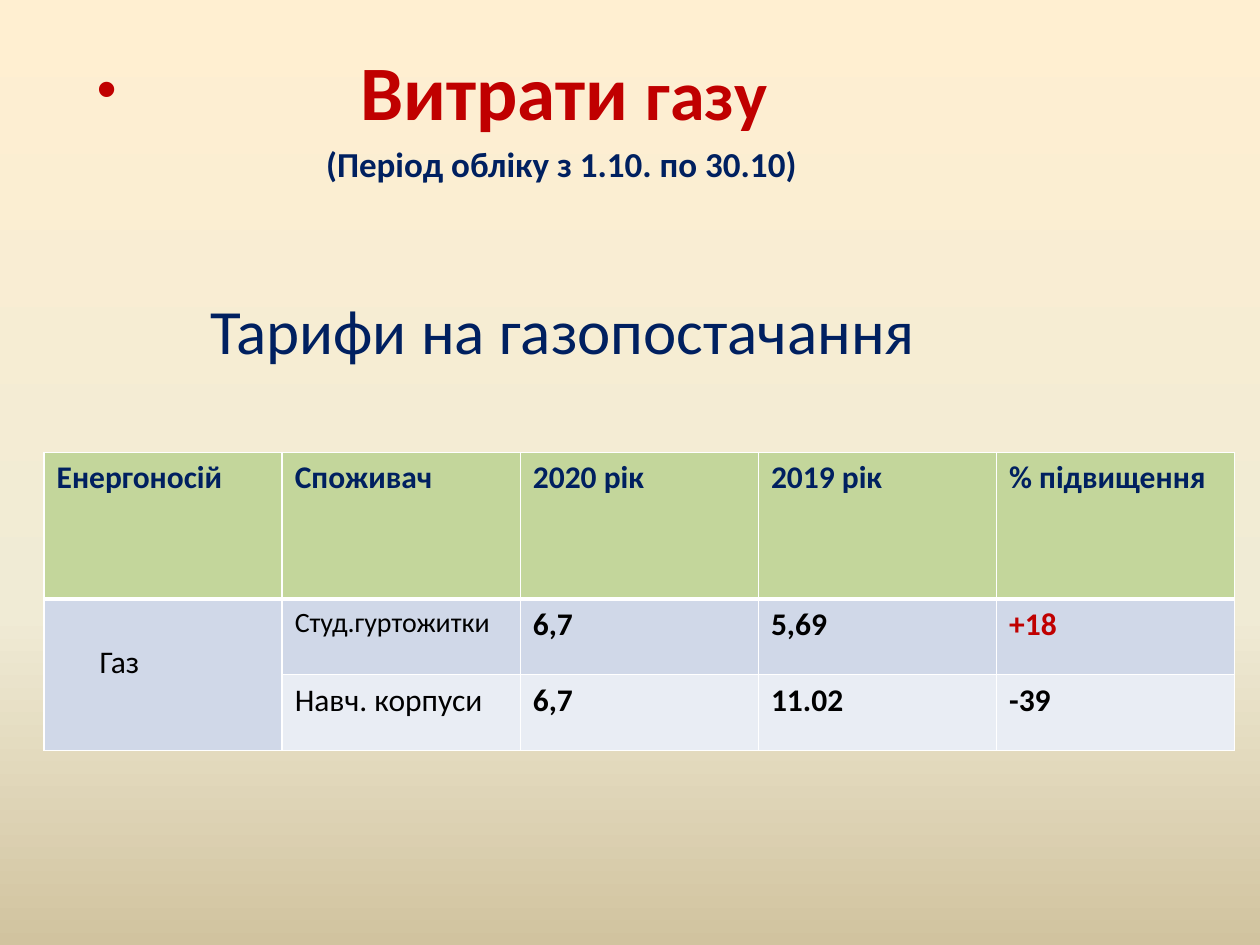
from copy import deepcopy
from typing import NamedTuple

from lxml.etree import SubElement
from pptx import Presentation
from pptx.dml.color import RGBColor
from pptx.oxml.ns import qn
from pptx.util import Inches, Pt

WIDTH, HEIGHT = Inches(10), Inches(7.5)
FONT = "Calibri"
NAVY = RGBColor(0x00, 0x20, 0x60)
RED = RGBColor(0xC0, 0x00, 0x00)
BLACK = RGBColor(0x00, 0x00, 0x00)
WHITE = RGBColor(0xFF, 0xFF, 0xFF)
GREEN = RGBColor(0xC3, 0xD6, 0x9B)
BLUE_BAND = RGBColor(0xD0, 0xD8, 0xE8)
PALE_BAND = RGBColor(0xE9, 0xED, 0xF4)
CREAM = RGBColor(0xFF, 0xEF, 0xD1)
IVORY = RGBColor(0xF0, 0xEB, 0xD5)
SAND = RGBColor(0xD1, 0xC3, 0x9F)
BACKDROP = ((0, CREAM), (0.65, IVORY), (1, SAND))
COLUMN = 0.189
ROW_HEIGHTS = (0.155, 0.08, 0.08)
BANDS = (GREEN, BLUE_BAND, PALE_BAND)


class Words(NamedTuple):
    text: str
    size: float = 18
    color: RGBColor = BLACK
    bold: bool = True


class Line(NamedTuple):
    words: tuple[Words, ...]
    indent: float
    gap: float = 0
    bullet: str = ""


HEADING = (
    Line((Words("Витрати ", 44, RED), Words("газу", 40, RED)), 0.209, bullet="•"),
    Line((Words("(Період обліку з 1.10. по 30.10)", 20, NAVY),), 0.182, gap=4),
    Line((Words("Тарифи на газопостачання", 36, NAVY, False),), 0.09, gap=61),
)
TARIFFS = (
    tuple(Words(label, color=NAVY) for label in
          ("Енергоносій", "Споживач", "2020 рік", "2019 рік", "% підвищення")),
    (Words("Газ", bold=False), Words("Студ.гуртожитки", 16, bold=False),
     Words("6,7"), Words("5,69"), Words("+18", color=RED)),
    (None, Words("Навч. корпуси", bold=False),
     Words("6,7"), Words("11.02"), Words("-39")),
)


def across(share: float) -> int:
    return round(WIDTH * share)


def down(share: float) -> int:
    return round(HEIGHT * share)


def paint_background(slide) -> None:
    fill = slide.background.fill
    fill.gradient()
    fill.gradient_angle = 270
    stops = slide.element.find(".//" + qn("a:gsLst"))
    stops.insert(1, deepcopy(stops[0]))
    for stop, (position, color) in zip(fill.gradient_stops, BACKDROP):
        stop.position = position
        stop.color.rgb = color


def write(paragraph, words: Words) -> None:
    run = paragraph.add_run()
    run.text = words.text
    formats = {"name": FONT, "size": Pt(words.size), "bold": words.bold}
    for name, value in formats.items():
        setattr(run.font, name, value)
    run.font.color.rgb = words.color


def set_indent(paragraph, line: Line) -> None:
    properties = paragraph._p.get_or_add_pPr()
    margin = across(line.indent)
    properties.set("marL", str(margin))
    if line.bullet:
        properties.set("indent", str(-margin))
        SubElement(properties, qn("a:buSzPct"), val="73000")
        SubElement(properties, qn("a:buFont"), typeface="Arial")
        SubElement(properties, qn("a:buChar"), char=line.bullet)


def draw_heading(slide) -> None:
    frame = slide.shapes.add_textbox(
        across(0.067), down(0.039), across(0.9), down(0.357)).text_frame
    frame.word_wrap = True
    for index, line in enumerate(HEADING):
        paragraph = frame.add_paragraph() if index else frame.paragraphs[0]
        set_indent(paragraph, line)
        if line.gap:
            paragraph.space_before = Pt(line.gap)
        for words in line.words:
            write(paragraph, words)


def draw_borders(cell, row: int) -> None:
    widths = {"L": 1, "R": 1, "T": 3 if row == 1 else 1, "B": 3 if row == 0 else 1}
    properties = cell._tc.get_or_add_tcPr()
    for side, width in widths.items():
        border = SubElement(properties, qn("a:ln" + side), w=str(Pt(width)))
        SubElement(SubElement(border, qn("a:solidFill")), qn("a:srgbClr"), val=str(WHITE))


def draw_tariffs(slide) -> None:
    rows, columns = len(TARIFFS), len(TARIFFS[0])
    table = slide.shapes.add_table(
        rows, columns, across(0.035), down(0.479),
        across(COLUMN * columns), down(sum(ROW_HEIGHTS))).table
    for column in table.columns:
        column.width = across(COLUMN)
    for row, (height, band, entries) in enumerate(zip(ROW_HEIGHTS, BANDS, TARIFFS)):
        table.rows[row].height = down(height)
        for column, words in enumerate(entries):
            cell = table.cell(row, column)
            draw_borders(cell, row)
            cell.fill.solid()
            cell.fill.fore_color.rgb = band
            if words:
                write(cell.text_frame.paragraphs[0], words)
    carrier = table.cell(1, 0)
    carrier.merge(table.cell(2, 0))
    carrier.margin_left, carrier.margin_top = across(0.044), down(0.047)


def main() -> None:
    deck = Presentation()
    deck.slide_width, deck.slide_height = WIDTH, HEIGHT
    slide = deck.slides.add_slide(deck.slide_layouts[6])
    paint_background(slide)
    draw_heading(slide)
    draw_tariffs(slide)
    deck.save("out.pptx")


if __name__ == "__main__":
    main()
